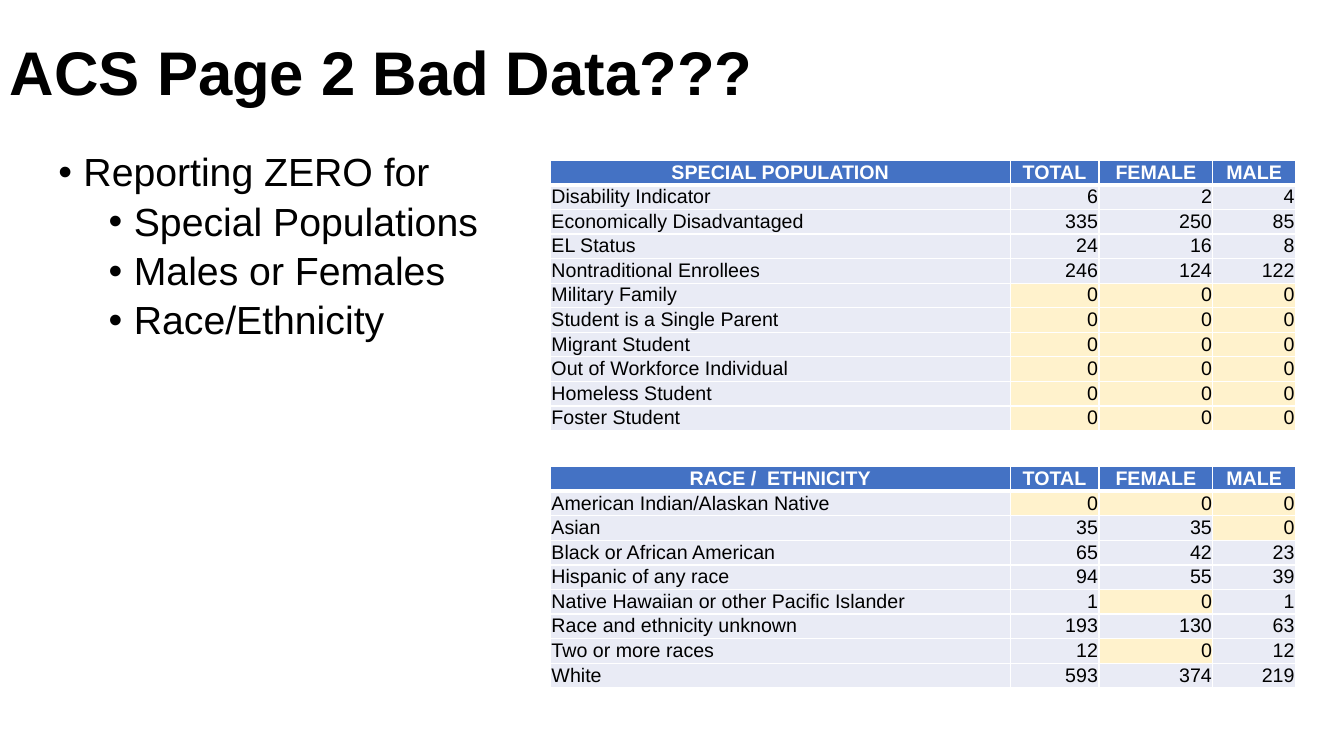
"""Build the ACS page 2 slide with zero counts highlighted in two tables."""
from dataclasses import dataclass

from lxml.etree import SubElement
from pptx import Presentation
from pptx.dml.color import RGBColor
from pptx.enum.text import MSO_ANCHOR, PP_ALIGN
from pptx.oxml import parse_xml
from pptx.oxml.ns import nsdecls, qn
from pptx.util import Inches, Pt


@dataclass(frozen=True)
class Theme:
    font: str = "Arial"
    text: str = "000000"
    white: str = "FFFFFF"
    header: str = "4472C4"
    body: str = "E9EBF5"
    zero: str = "FFF2CC"
    title_size: int = 44
    bullet_size: int = 28
    table_size: int = 14


theme = Theme()


def style(p, size, color, bold=False):
    """Format every run of a paragraph."""
    for r in p.runs:
        r.font.name = theme.font
        r.font.size = Pt(size)
        r.font.bold = bold
        r.font.color.rgb = RGBColor.from_string(color)


def add_borders(cell, row):
    """Give a cell white borders, with a thick line under the header."""
    tc_pr = cell._tc.get_or_add_tcPr()
    for i, side in enumerate("LRTB"):
        thick = (row, side) in ((0, "B"), (1, "T"))
        tc_pr.insert(i, parse_xml(
            f'<a:ln{side} {nsdecls("a")} w="{Pt(3 if thick else 1)}"><a:solidFill>'
            f'<a:srgbClr val="{theme.white}"/></a:solidFill></a:ln{side}>'))


prs = Presentation()
prs.slide_width, prs.slide_height = Inches(13.33), Inches(7.5)
s = prs.slides.add_slide(prs.slide_layouts[6])

sp = s.shapes.add_textbox(Inches(0), Inches(0.02), Inches(11.5), Inches(1.45))
tf = sp.text_frame
tf.word_wrap = True
tf.vertical_anchor = MSO_ANCHOR.MIDDLE
tf.text = "ACS Page 2 Bad Data???"
p = tf.paragraphs[0]
p.line_spacing = 0.9
style(p, theme.title_size, theme.text, bold=True)

bullets = [
    ("Reporting ZERO for", 0),
    ("Special Populations", 1),
    ("Males or Females", 1),
    ("Race/Ethnicity", 1),
]
sp = s.shapes.add_textbox(Inches(0.48), Inches(1.47), Inches(5.67), Inches(4.76))
tf = sp.text_frame
tf.word_wrap = True
for i, (text, level) in enumerate(bullets):
    p = tf.add_paragraph() if i else tf.paragraphs[0]
    p.text = text
    p.level = level
    p.line_spacing = 0.9
    p.space_before = Pt(5 if i else 0)
    p_pr = p._p.get_or_add_pPr()
    p_pr.set("marL", str(Inches(0.25 + 0.5 * level)))
    p_pr.set("indent", str(Inches(-0.25)))
    SubElement(p_pr, qn("a:buFont"), typeface=theme.font)
    SubElement(p_pr, qn("a:buChar"), char="•")
    style(p, theme.bullet_size, theme.text)

populations = [
    ("SPECIAL POPULATION", "TOTAL", "FEMALE", "MALE"),
    ("Disability Indicator", 6, 2, 4),
    ("Economically Disadvantaged", 335, 250, 85),
    ("EL Status", 24, 16, 8),
    ("Nontraditional Enrollees", 246, 124, 122),
    ("Military Family", 0, 0, 0),
    ("Student is a Single Parent", 0, 0, 0),
    ("Migrant Student", 0, 0, 0),
    ("Out of Workforce Individual", 0, 0, 0),
    ("Homeless Student", 0, 0, 0),
    ("Foster Student", 0, 0, 0),
]
races = [
    ("RACE /  ETHNICITY", "TOTAL", "FEMALE", "MALE"),
    ("American Indian/Alaskan Native", 0, 0, 0),
    ("Asian", 35, 35, 0),
    ("Black or African American", 65, 42, 23),
    ("Hispanic of any race", 94, 55, 39),
    ("Native Hawaiian or other Pacific Islander", 1, 0, 1),
    ("Race and ethnicity unknown", 193, 130, 63),
    ("Two or more races", 12, 0, 12),
    ("White", 593, 374, 219),
]
col_widths = (4.56, 0.88, 1.13, 0.82)
for rows, top, height, header_height in (
    (populations, 1.59, 2.66, 0.12),
    (races, 4.63, 2.17, 0.21),
):
    sp = s.shapes.add_table(len(rows), len(col_widths), Inches(5.46), Inches(top),
                            Inches(sum(col_widths)), Inches(height))
    table = sp.table
    for column, width in zip(table.columns, col_widths):
        column.width = Inches(width)
    for i, values in enumerate(rows):
        table.rows[i].height = Inches(0.17 if i else header_height)
        for j, value in enumerate(values):
            cell = table.cell(i, j)
            cell.text = str(value)
            cell.margin_left = cell.margin_right = cell.margin_top = Inches(0.01)
            cell.margin_bottom = Inches(0)
            p = cell.text_frame.paragraphs[0]
            if i == 0:
                fill, color, p.alignment = theme.header, theme.white, PP_ALIGN.CENTER
            else:
                fill = theme.zero if value == 0 else theme.body
                color = theme.text
                p.alignment = PP_ALIGN.RIGHT if j else PP_ALIGN.LEFT
            style(p, theme.table_size, color, bold=i == 0)
            cell.fill.solid()
            cell.fill.fore_color.rgb = RGBColor.from_string(fill)
            add_borders(cell, i)
    sp.height = Inches(height)

prs.save("out.pptx")
